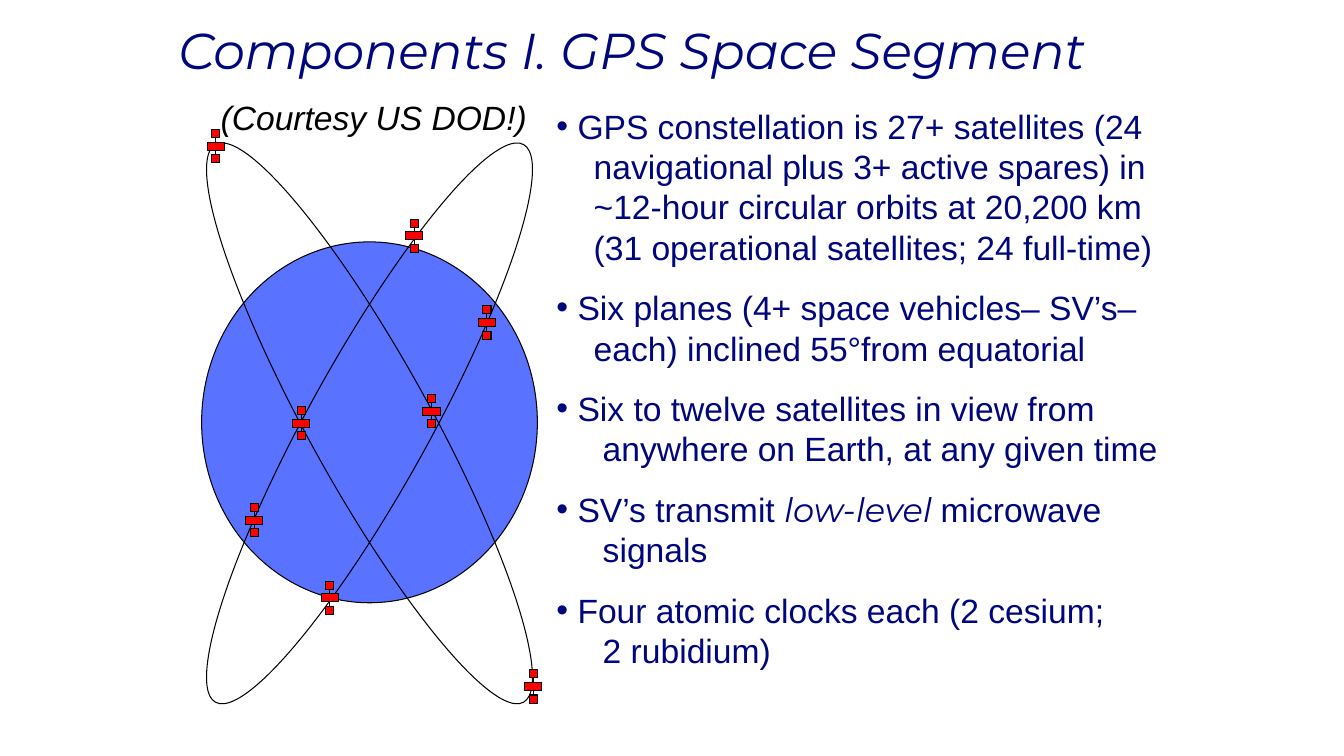
from dataclasses import dataclass

from lxml.etree import SubElement
from pptx import Presentation
from pptx.dml.color import RGBColor as Color
from pptx.enum.shapes import MSO_CONNECTOR as Connector, MSO_SHAPE as Shape
from pptx.enum.text import MSO_AUTO_SIZE as AutoSize
from pptx.oxml.ns import qn
from pptx.util import Inches, Pt


@dataclass(frozen=True)
class Theme:
    navy: str = "00067B"
    black: str = "000000"
    earth: str = "5972FF"
    satellite: str = "FF0000"
    heading_font: str = "Montserrat"
    body_font: str = "Arial"
    title_size: int = 36
    body_size: int = 24
    line_width: float = 0.75
    bullet_gap: float = 14.4
    line_pitch: float = 28.8


def add_run(paragraph, text, *, font, size, color, italic=False):
    run = paragraph.add_run()
    run.text = text
    run.font.name = font
    run.font.size = Pt(size)
    run.font.italic = italic
    run.font.color.rgb = Color.from_string(color)


class SlideBuilder:
    def __init__(self, slide, theme):
        self.shapes = slide.shapes
        self.theme = theme

    def text_frame(self, left, top, width, height, wrap=True):
        box = self.shapes.add_textbox(*map(Inches, (left, top, width, height)))
        frame = box.text_frame
        frame.word_wrap = wrap
        frame.auto_size = AutoSize.NONE
        return frame

    def label(self, text, left, top, width, height, **style):
        frame = self.text_frame(left, top, width, height)
        add_run(frame.paragraphs[0], text, **style)

    def outline(self, line):
        line.color.rgb = Color.from_string(self.theme.black)
        line.width = Pt(self.theme.line_width)

    def shape(self, kind, left, top, width, height, fill=None, rotation=0):
        shape = self.shapes.add_shape(kind, *map(Inches, (left, top, width, height)))
        shape.shadow.inherit = False
        shape.rotation = rotation
        if fill:
            shape.fill.solid()
            shape.fill.fore_color.rgb = Color.from_string(fill)
        else:
            shape.fill.background()
        self.outline(shape.line)

    def mast(self, x, top, bottom):
        mast = self.shapes.add_connector(
            Connector.STRAIGHT, *map(Inches, (x, top, x, bottom)))
        self.outline(mast.line)
        SubElement(mast._element.spPr, qn("a:effectLst"))

    def satellite(self, x, y):
        red = self.theme.satellite
        self.mast(x, y - 0.08, y + 0.09)
        self.shape(Shape.RECTANGLE, x - 0.085, y - 0.04, 0.17, 0.08, red)
        for panel_y in (y - 0.125, y + 0.125):
            self.shape(Shape.RECTANGLE, x - 0.04, panel_y - 0.04, 0.08, 0.08, red)

    def bullet_list(self, points, left, top, width, height):
        frame = self.text_frame(left, top, width, height, wrap=False)
        paragraph = frame.paragraphs[0]
        for number, (indent, lines) in enumerate(points):
            for row, line in enumerate(lines):
                if number or row:
                    paragraph = frame.add_paragraph()
                paragraph.line_spacing = Pt(self.theme.line_pitch)
                if row:
                    self.indent(paragraph, indent)
                else:
                    self.indent(paragraph, 0.21, bullet="•")
                    paragraph.space_before = Pt(self.theme.bullet_gap if number else 0)
                self.body_line(paragraph, line)

    def indent(self, paragraph, margin, bullet=None):
        properties = paragraph._p.get_or_add_pPr()
        properties.set("marL", str(Inches(margin)))
        properties.set("indent", str(-Inches(margin) if bullet else 0))
        if bullet:
            color = SubElement(properties, qn("a:buClr"))
            SubElement(color, qn("a:srgbClr"), val=self.theme.navy)
            SubElement(properties, qn("a:buFont"), typeface=self.theme.body_font)
            SubElement(properties, qn("a:buChar"), char=bullet)
        else:
            SubElement(properties, qn("a:buNone"))

    def body_line(self, paragraph, line):
        for part, text in enumerate(line.split("*")):
            emphasis = part % 2 == 1
            font = self.theme.heading_font if emphasis else self.theme.body_font
            add_run(paragraph, text, font=font, size=self.theme.body_size,
                    color=self.theme.navy, italic=emphasis)


POINTS = [
    (0.37, ["GPS constellation is 27+ satellites (24",
            "navigational plus 3+ active spares) in",
            "~12-hour circular orbits at 20,200 km",
            "(31 operational satellites; 24 full-time)"]),
    (0.37, ["Six planes (4+ space vehicles– SV’s–",
            "each) inclined 55°from equatorial"]),
    (0.46, ["Six to twelve satellites in view from",
            "anywhere on Earth, at any given time"]),
    (0.46, ["SV’s transmit *low-level *microwave", "signals"]),
    (0.46, ["Four atomic clocks each (2 cesium;", "2 rubidium)"]),
]

SATELLITES = [(2.14, 1.45), (2.99, 4.2), (4.28, 4.08), (5.29, 6.81),
              (4.11, 2.34), (4.83, 3.2), (3.27, 5.93), (2.52, 5.16)]


def main():
    presentation = Presentation()
    presentation.slide_width = Inches(13.33)
    presentation.slide_height = Inches(7.5)
    theme = Theme()
    builder = SlideBuilder(
        presentation.slides.add_slide(presentation.slide_layouts[6]), theme)

    builder.label("Components I. GPS Space Segment", 1.67, 0.14, 10, 0.71,
                  font=theme.heading_font, size=theme.title_size,
                  color=theme.navy, italic=True)
    builder.bullet_list(POINTS, 5.42, 1, 6.23, 5.76)
    builder.shape(Shape.OVAL, 2, 2.4, 3.33, 3.58, theme.earth)
    for tilt in (-28.9, 28.9):
        builder.shape(Shape.OVAL, 3.06, 1.04, 1.21, 6.32, rotation=tilt)
    builder.label("(Courtesy US DOD!)", 2.09, 0.91, 3.24, 0.5,
                  font=theme.body_font, size=theme.body_size,
                  color=theme.black, italic=True)
    for x, y in SATELLITES:
        builder.satellite(x, y)

    presentation.save("out.pptx")


if __name__ == "__main__":
    main()
